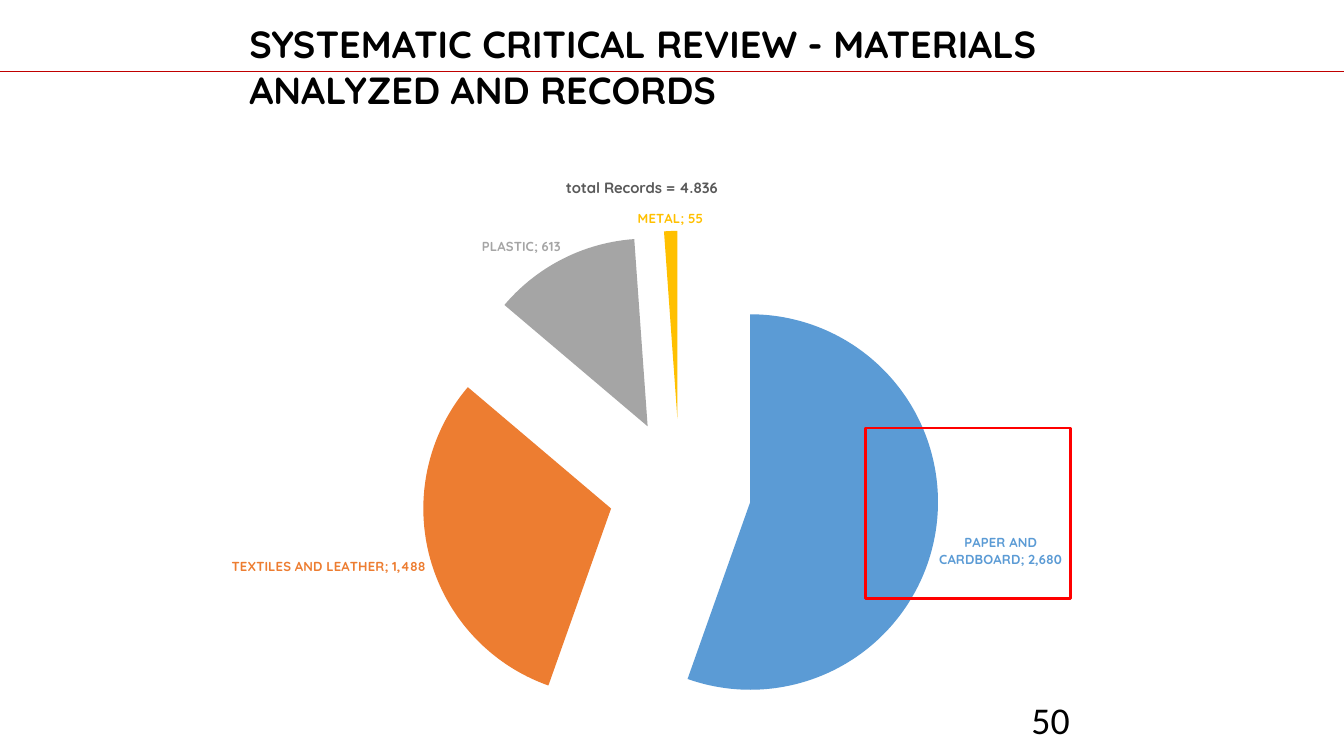
from lxml import etree
from pptx import Presentation, util as u
from pptx.chart.data import CategoryChartData
from pptx.dml.color import RGBColor
from pptx.enum import chart as charts, shapes, text
from pptx.oxml import parse_xml
from pptx.oxml.ns import nsdecls, qn

COLORS = {"ink": "000000", "rule": "C00000", "frame": "FF0000", "heading": "595959"}
TITLE = "SYSTEMATIC CRITICAL REVIEW - MATERIALS ANALYZED AND RECORDS"
CHART_TITLE = "total Records = 4.836"
PAGE_NUMBER = "50"
RECORDS = [
    ("PAPER AND CARDBOARD", 2680, "5B9BD5"),
    ("TEXTILES AND LEATHER", 1488, "ED7D31"),
    ("PLASTIC", 613, "A5A5A5"),
    ("METAL", 55, "FFC000"),
]
EXPLOSION = 38
NO_BREAK_SPACE = chr(160)
WIDTH, HEIGHT = 20, 11.25
PLACES = {
    "chart": (2.03, 2.33, 15.12, 8.94),
    "number": (15.25, 10.41, 4.5, 0.6),
    "frame": (12.88, 6.37, 3.05, 2.54),
    "title": (3.61, 0.26, 12.77, 1.46),
}
RULE_Y = 1.06


def place(name):
    return [u.Inches(length) for length in PLACES[name]]


def style(font, size, color, name="Quicksand", bold=True):
    font.name, font.size, font.bold = name, u.Pt(size), bold
    font.color.rgb = RGBColor.from_string(color)


def set_layout(parent, after, **shares):
    for old in parent.findall(qn("c:layout")):
        parent.remove(old)
    target = '<c:layoutTarget val="inner"/>' if "w" in shares else ""
    modes = '<c:xMode val="edge"/><c:yMode val="edge"/>'
    sizes = "".join(f'<c:{key} val="{share}"/>' for key, share in shares.items())
    layout = parse_xml(f'<c:layout {nsdecls("c")}><c:manualLayout>{target}{modes}{sizes}'
                       '</c:manualLayout></c:layout>')
    if after is None:
        parent.insert(0, layout)
    else:
        after.addnext(layout)


def add_pie(page):
    data = CategoryChartData(number_format="#,##0")
    data.categories = [name for name, _, _ in RECORDS]
    data.add_series("Series 1", [count for _, count, _ in RECORDS])
    chart = page.shapes.add_chart(charts.XL_CHART_TYPE.PIE, *place("chart"), data).chart
    chart.has_legend = False
    style(chart.font, 10, COLORS["ink"], bold=False)

    chart.has_title = True
    para = chart.chart_title.text_frame.paragraphs[0]
    para.text = CHART_TITLE
    style(para.font, 16, COLORS["heading"])
    title = chart.chart_title._element
    set_layout(title, title.find(qn("c:tx")), x=0.42, y=0.03)

    plot = chart.plots[0]
    plot.vary_by_categories = True
    set_layout(plot._element.getparent(), None, x=0.28, y=0.12, w=0.51, h=0.87)

    series = plot.series[0]
    explosion = parse_xml(f'<c:explosion {nsdecls("c")} val="{EXPLOSION}"/>')
    series._element.find(qn("c:tx")).addnext(explosion)
    for index, (_, _, color) in enumerate(RECORDS):
        point = series.points[index]
        point.format.fill.solid()
        point.format.fill.fore_color.rgb = RGBColor.from_string(color)
        point.format.line.fill.background()
        style(point.data_label.font, 14, color)
        point.data_label.position = charts.XL_LABEL_POSITION.OUTSIDE_END
    for label in series._element.iter(qn("c:dLbl")):
        label.find(qn("c:showCatName")).set("val", "1")
        etree.SubElement(label, qn("c:separator")).text = ";" + NO_BREAK_SPACE


deck = Presentation()
deck.slide_width, deck.slide_height = u.Inches(WIDTH), u.Inches(HEIGHT)
page = deck.slides.add_slide(deck.slide_layouts[5])

add_pie(page)

rule = page.shapes.add_connector(shapes.MSO_CONNECTOR.STRAIGHT, 0, u.Inches(RULE_Y),
                                 u.Inches(WIDTH), u.Inches(RULE_Y))
rule.line.color.rgb = RGBColor.from_string(COLORS["rule"])
rule.line.width = u.Pt(0.5)
etree.SubElement(rule._element.spPr, qn("a:effectLst"))

number = page.shapes.add_textbox(*place("number"))
number.text_frame.word_wrap = True
number.text_frame.vertical_anchor = text.MSO_ANCHOR.MIDDLE
para = number.text_frame.paragraphs[0]
para.text = PAGE_NUMBER
style(para.font, 40.5, COLORS["ink"], "Calibri", False)

frame = page.shapes.add_shape(shapes.MSO_SHAPE.RECTANGLE, *place("frame"))
frame.shadow.inherit = False
frame.fill.background()
frame.line.color.rgb = RGBColor.from_string(COLORS["frame"])
frame.line.width = u.Pt(3)

title = page.shapes.title
title.left, title.top, title.width, title.height = place("title")
title.text_frame.word_wrap = True
title.text_frame.auto_size = text.MSO_AUTO_SIZE.SHAPE_TO_FIT_TEXT
title.text_frame.vertical_anchor = text.MSO_ANCHOR.TOP
para = title.text_frame.paragraphs[0]
para.text = TITLE
para.alignment = text.PP_ALIGN.LEFT
style(para.font, 40.5, COLORS["ink"])

deck.save("out.pptx")
